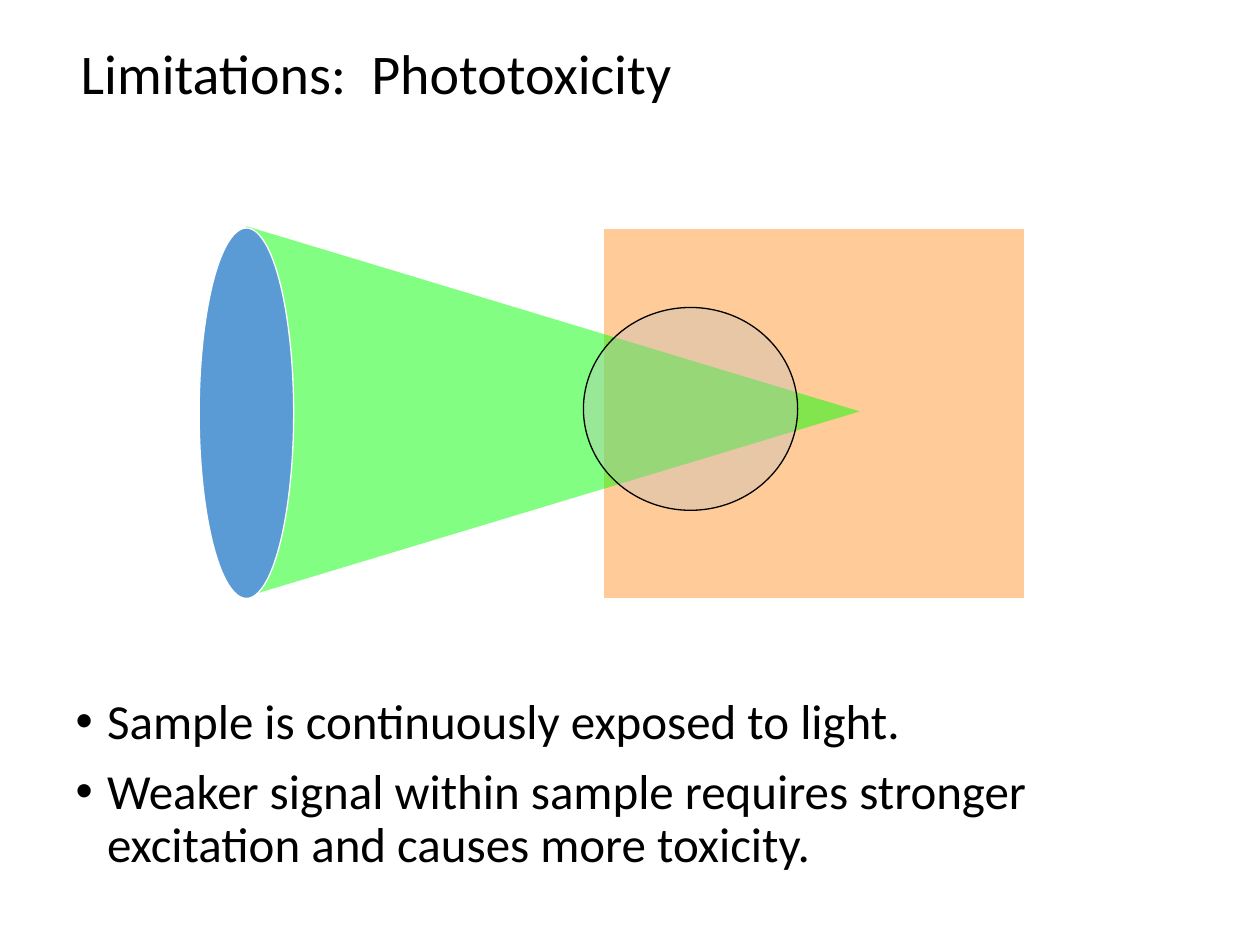
from lxml import etree
from pptx import Presentation
from pptx.dml.color import RGBColor
from pptx.enum import shapes, text
from pptx.oxml import ns
from pptx.util import Pt

HEX = {"ink": "000000", "edge": "FFFFFF", "tissue": "FFCC99",
       "beam": "00FF00", "lens": "5B9BD5", "cell": "C0C0C0"}
FONT = "Calibri"
TITLE = "Limitations:  Phototoxicity"
POINTS = ["Sample is continuously exposed to light.",
          "Weaker signal within sample requires stronger excitation "
          "and causes more toxicity."]

KIND = shapes.MSO_SHAPE
PARTS = [
    (KIND.RECTANGLE, (344.9, 130.3, 240.5, 211.7), 0, "tissue", 100, "edge"),
    (KIND.ISOSCELES_TRIANGLE, (210.2, 59.8, 211.7, 350.6), 90, "beam", 49, None),
    (KIND.OVAL, (113.8, 130.3, 54, 211.7), 0, "lens", 100, "edge"),
    (KIND.OVAL, (333.4, 175.7, 122.4, 115.9), 0, "cell", 36, "ink"),
]


def rgb(name):
    return RGBColor.from_string(HEX[name])


def place(shape, box):
    shape.left, shape.top, shape.width, shape.height = map(Pt, box)


def write(shape, box, lines, size, gap):
    place(shape, box)
    frame = shape.text_frame
    frame.text = "\n".join(lines)
    frame.word_wrap = True
    frame.auto_size = text.MSO_AUTO_SIZE.NONE
    frame.vertical_anchor = text.MSO_ANCHOR.TOP
    for para in frame.paragraphs:
        para.alignment = text.PP_ALIGN.LEFT
        para.line_spacing = 0.9
        para.space_before = Pt(gap)
        for run in para.runs:
            run.font.name = FONT
            run.font.size = Pt(size)
            run.font.color.rgb = rgb("ink")
    return frame.paragraphs


def bullet(para):
    props = para._p.get_or_add_pPr()
    props.set("marL", str(Pt(18)))
    props.set("indent", str(-Pt(18)))
    font = etree.SubElement(props, ns.qn("a:buFont"))
    font.set("typeface", "Arial")
    mark = etree.SubElement(props, ns.qn("a:buChar"))
    mark.set("char", "•")


def draw(slide, kind, box, turn, fill, alpha, line):
    shape = slide.shapes.add_shape(kind, *map(Pt, box))
    shape.rotation = turn
    shape.shadow.inherit = False
    shape.fill.solid()
    shape.fill.fore_color.rgb = rgb(fill)
    if alpha < 100:
        tone = shape._element.spPr.find(".//" + ns.qn("a:srgbClr"))
        etree.SubElement(tone, ns.qn("a:alpha")).set("val", str(alpha * 1000))
    if line:
        shape.line.color.rgb = rgb(line)
        shape.line.width = Pt(0.75)
    else:
        shape.line.fill.background()


def main():
    deck = Presentation()
    deck.slide_width, deck.slide_height = Pt(720), Pt(540)
    slide = deck.slides.add_slide(deck.slide_layouts[1])
    title, body = slide.placeholders
    write(title, (38.9, 23, 612, 90), [TITLE], 32, 0)
    for para in write(body, (36, 394.6, 648, 118.8), POINTS, 28, 10):
        bullet(para)
    for part in PARTS:
        draw(slide, *part)
    deck.save("out.pptx")


if __name__ == "__main__":
    main()
